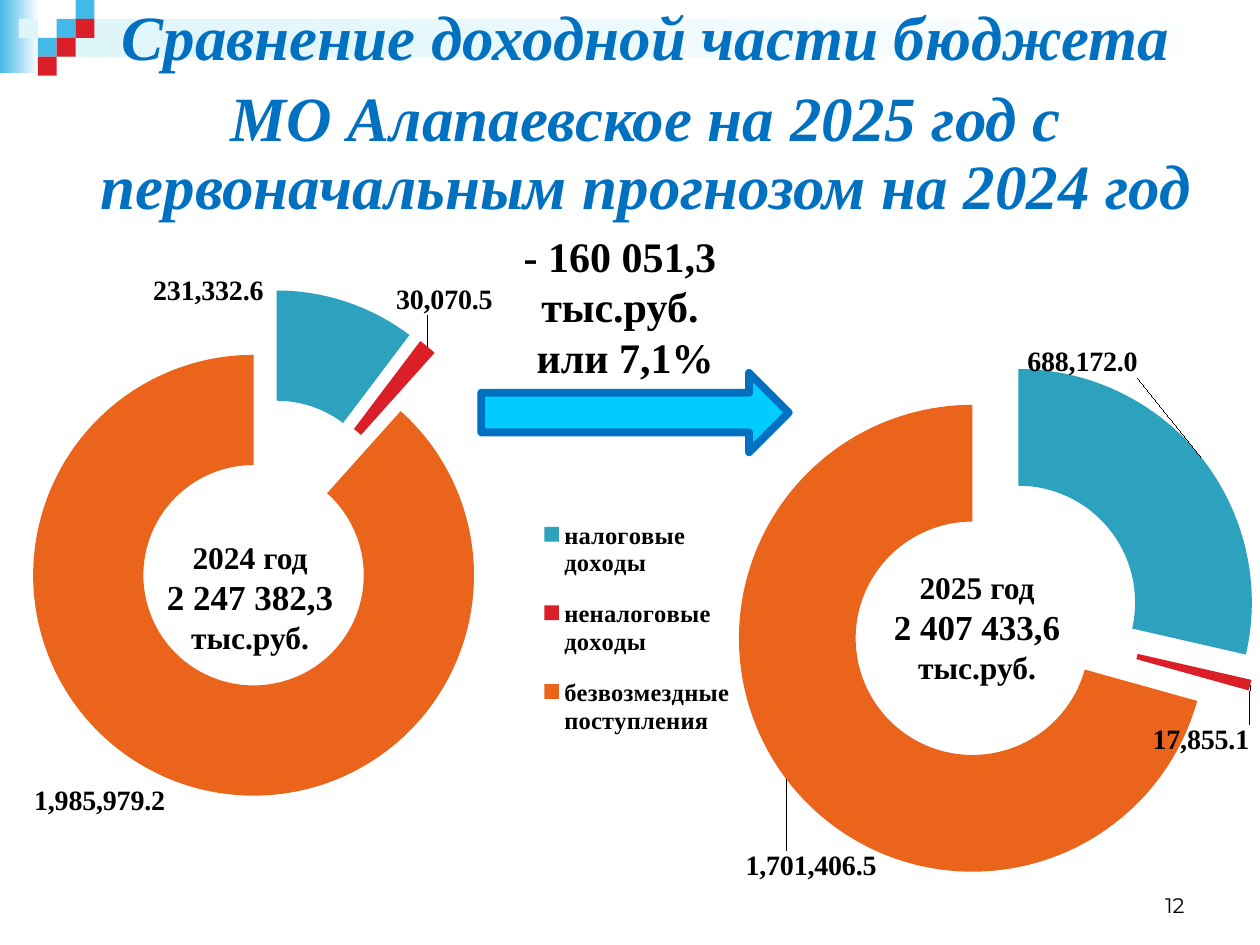
from lxml.etree import SubElement
from pptx import Presentation
from pptx.chart.data import CategoryChartData
from pptx.dml.color import RGBColor
from pptx.enum.chart import XL_CHART_TYPE as ChartType, XL_LEGEND_POSITION as LegendPosition
from pptx.enum.shapes import MSO_SHAPE as Shape
from pptx.enum.text import MSO_ANCHOR as Anchor, PP_ALIGN as Align
from pptx.oxml import parse_xml
from pptx.oxml.ns import nsdecls, qn
from pptx.util import Inches, Pt

BLACK = RGBColor(0, 0, 0)
WHITE = RGBColor(255, 255, 255)
BLUE = RGBColor(0x00, 0x70, 0xC0)
CYAN = RGBColor(0x00, 0xCC, 0xFF)
SKY = RGBColor(0x44, 0xB9, 0xE8)
PALE = RGBColor(0xDE, 0xF5, 0xFA)
TEAL = RGBColor(0x2D, 0xA2, 0xBF)
RED = RGBColor(0xDA, 0x1F, 0x28)
ORANGE = RGBColor(0xEB, 0x64, 0x1B)
SERIF = "Times New Roman"

TITLE = ["Сравнение доходной части бюджета",
         "МО Алапаевское на 2025 год с первоначальным прогнозом на 2024 год"]
CHANGE = [[("- 160 051,3 тыс.руб.", 24)], [(" или 7,1%", 24)]]
INCOME = ["налоговые доходы", "неналоговые доходы", "безвозмездные поступления"]
INCOME_COLORS = [TEAL, RED, ORANGE]
YEARS = [
    dict(year="2025 год", total="2 407 433,6 ", values=[688172, 17855.1, 1701406.5],
         box=(4.37, 1.15, 5.79, 6.93), plot=(0.25, 0.24, 0.72, 0.61), explosion=25,
         label_shifts=[(-0.1, -0.15), (0.01, 0.08), (-0.03, 0.14)],
         total_box=(6.89, 4.46, 1.73, 1.1), legend=None),
    dict(year="2024 год", total="2 247 382,3 ", values=[231332.6, 30070.5, 1985979.2],
         box=(-0.87, 0.91, 6.85, 7.09), plot=(0.14, 0.18, 0.59, 0.6), explosion=31,
         label_shifts=[(-0.14, -0.07), (0.06, -0.1), (-0.11, 0.08)],
         total_box=(0.98, 4.22, 2.01, 1.1), legend=(0.75, 0.43, 0.23, 0.29)),
]
TILE = 0.15
TILES = [(3, 1, SKY), (4, 0, SKY), (4, 1, RED), (2, 2, SKY), (1, 1, PALE), (3, 2, RED), (2, 3, RED)]
BANDS = [((0, 0, 0.31, 0.58), SKY), ((0.45, 0.15, 9.55, 0.3), PALE)]


def inches(box):
    return [Inches(length) for length in box]


def add_plain(slide, kind, box):
    plain = slide.shapes.add_shape(kind, *inches(box))
    plain.shadow.inherit = False
    plain.line.fill.background()
    return plain


def add_decoration(slide):
    for box, start in BANDS:
        fill = add_plain(slide, Shape.RECTANGLE, box).fill
        fill.gradient()
        fill.gradient_angle = 0
        for stop, color in zip(fill.gradient_stops, (start, WHITE)):
            stop.color.rgb = color
    for column, row, color in TILES:
        fill = add_plain(slide, Shape.RECTANGLE, (column * TILE, row * TILE, TILE, TILE)).fill
        fill.solid()
        fill.fore_color.rgb = color


def add_text(slide, box, lines, align=Align.CENTER, font=SERIF, bold=True, anchor=Anchor.TOP):
    frame = slide.shapes.add_textbox(*inches(box)).text_frame
    frame.word_wrap = True
    frame.vertical_anchor = anchor
    for number, line in enumerate(lines):
        paragraph = frame.add_paragraph() if number else frame.paragraphs[0]
        paragraph.alignment = align
        paragraph.font.name = font
        paragraph.font.bold = bold
        paragraph.font.color.rgb = BLACK
        for text, size in line:
            run = paragraph.add_run()
            run.text = text
            run.font.size = Pt(size)


def manual_layout(settings):
    layout = parse_xml(f"<c:layout {nsdecls('c')}><c:manualLayout/></c:layout>")
    for tag, value in settings:
        SubElement(layout[0], qn(f"c:{tag}")).set("val", str(value))
    return layout


def box_layout(box, inner=False):
    target = [("layoutTarget", "inner")] if inner else []
    modes = [("xMode", "edge"), ("yMode", "edge")]
    return manual_layout(target + modes + list(zip("xywh", box)))


def add_doughnut(slide, data):
    chart_data = CategoryChartData(number_format="#,##0.0")
    chart_data.categories = INCOME if data["legend"] else ["1", "2", "3"]
    chart_data.add_series("Series 1", data["values"])
    chart = slide.shapes.add_chart(ChartType.DOUGHNUT, *inches(data["box"]), chart_data).chart
    chart.has_title = False
    chart.font.name = "Arial"
    chart.font.size = Pt(10)
    chart.font.color.rgb = BLACK
    chart._chartSpace.chart.addnext(parse_xml(
        f"<c:spPr {nsdecls('c', 'a')}><a:noFill/><a:ln><a:noFill/></a:ln></c:spPr>"))

    plot = chart.plots[0]
    plot.vary_by_categories = True
    plot_area = chart._chartSpace.chart.plotArea
    for old in plot_area.findall(qn("c:layout")):
        plot_area.remove(old)
    plot_area.insert(0, box_layout(data["plot"], inner=True))

    plot.has_data_labels = True
    plot.data_labels.show_value = True
    plot.data_labels.show_percentage = False
    series = plot.series[0]
    for index, (color, shift) in enumerate(zip(INCOME_COLORS, data["label_shifts"])):
        point = series.points[index]
        point.format.fill.solid()
        point.format.fill.fore_color.rgb = color
        font = point.data_label.font
        font.name, font.size, font.bold = SERIF, Pt(16), True
        font.color.rgb = BLACK
        label = series._element.findall(f".//{qn('c:dLbl')}")[index]
        label.find(qn("c:idx")).addnext(manual_layout(zip("xy", shift)))
    explosion = parse_xml(f"<c:explosion {nsdecls('c')} val=\"{data['explosion']}\"/>")
    series._element.find(qn("c:dPt")).addprevious(explosion)

    chart.has_legend = bool(data["legend"])
    if data["legend"]:
        legend = chart.legend
        legend.position = LegendPosition.RIGHT
        legend.include_in_layout = False
        legend.font.name, legend.font.size, legend.font.bold = SERIF, Pt(14), True
        for old in legend._element.findall(qn("c:layout")):
            legend._element.remove(old)
        legend._element.find(qn("c:legendPos")).addnext(box_layout(data["legend"]))


def format_title(slide):
    title = slide.shapes.title
    title.left, title.top, title.width, title.height = inches((0.59, 0, 9.07, 1.89))
    slide.shapes._spTree.append(title._element)
    frame = title.text_frame
    frame.text = "\n".join(TITLE)
    frame.word_wrap = True
    frame.vertical_anchor = Anchor.TOP
    for paragraph in frame.paragraphs:
        paragraph.alignment = Align.CENTER
        paragraph.line_spacing = 0.9
        paragraph.space_before = Pt(7.2)
        font = paragraph.font
        font.name, font.size, font.bold, font.italic = SERIF, Pt(36), True, True
        font.color.rgb = BLUE


def main():
    deck = Presentation()
    deck.slide_width, deck.slide_height = Inches(10), Inches(7.5)
    slide = deck.slides.add_slide(deck.slide_layouts[5])
    add_decoration(slide)
    add_text(slide, (7.17, 6.83, 2.33, 0.5), [[("12", 12)]],
             Align.RIGHT, "Montserrat", False, Anchor.BOTTOM)
    arrow = add_plain(slide, Shape.RIGHT_ARROW, (3.82, 2.96, 2.44, 0.63))
    arrow.fill.solid()
    arrow.fill.fore_color.rgb = CYAN
    arrow.line.color.rgb = BLUE
    arrow.line.width = Pt(4.5)
    add_text(slide, (3.58, 1.78, 2.68, 1.31), CHANGE)
    format_title(slide)
    for data in YEARS:
        add_text(slide, data["total_box"],
                 [[(data["year"], 18)], [(data["total"], 20), ("тыс.руб.", 18)]])
    for data in YEARS:
        add_doughnut(slide, data)
    deck.save("out.pptx")


if __name__ == "__main__":
    main()
